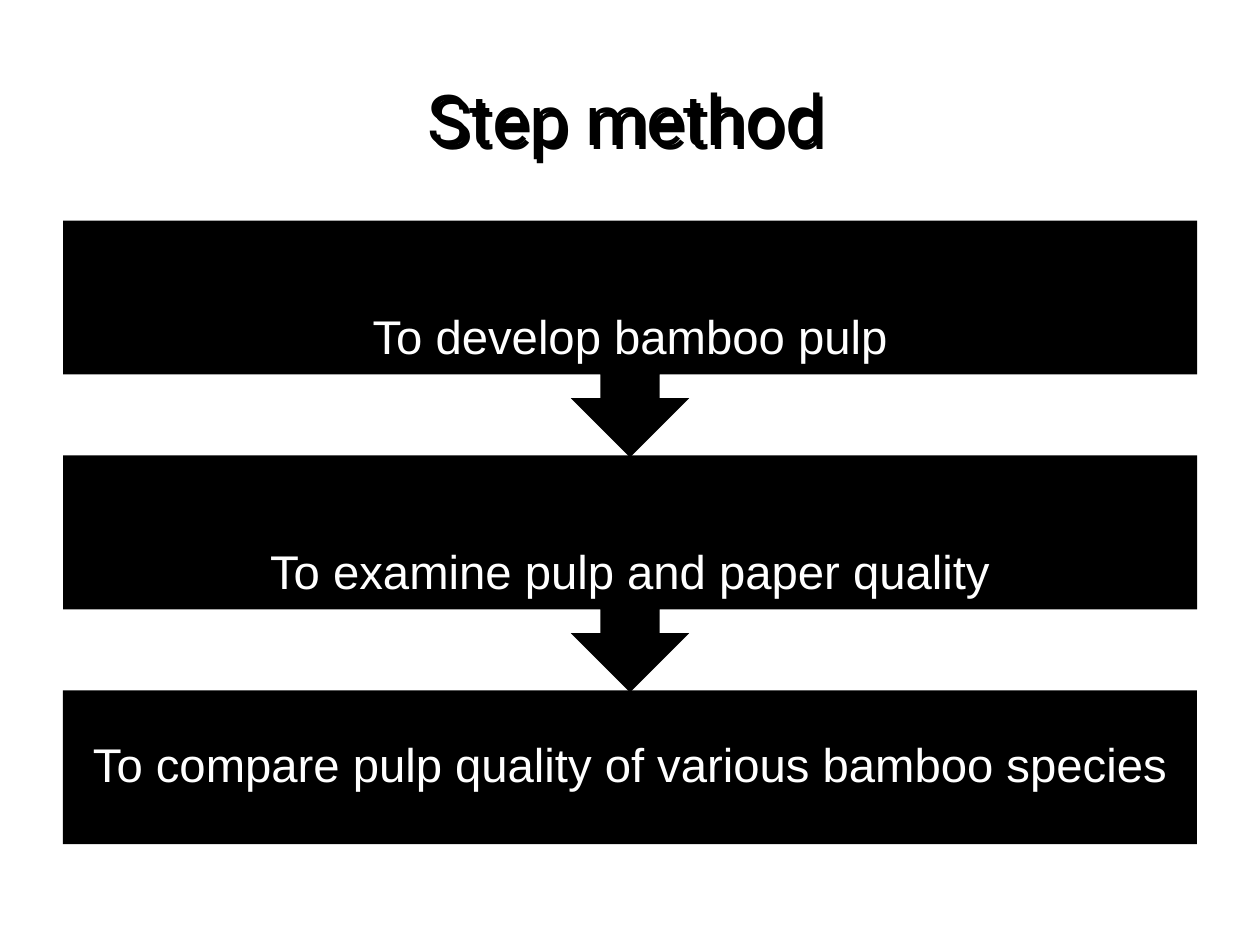
from lxml.etree import SubElement
from pptx import Presentation
from pptx.dml.color import RGBColor
from pptx.enum.shapes import MSO_SHAPE as SHAPE
from pptx.enum.text import MSO_ANCHOR as ANCHOR, PP_ALIGN as ALIGN
from pptx.oxml.ns import qn
from pptx.util import Inches, Pt

COLORS = {"ink": "000000", "label": "FFFFFF"}
STEPS = [
    "To develop bamboo pulp",
    "To examine pulp and paper quality",
    "To compare pulp quality of various bamboo species",
]
LEFT, TOP, WIDTH, PITCH = 0.5, 1.75, 9, 1.865
CALLOUT_H, BOX_H = 1.88, 1.22


def rgb(name):
    """Return the named colour."""
    return RGBColor.from_string(COLORS[name])


def write(tf, text, size, font, color):
    """Put one centred run in a text frame."""
    tf.word_wrap = True
    tf.vertical_anchor = ANCHOR.MIDDLE
    p = tf.paragraphs[0]
    p.alignment = ALIGN.CENTER
    r = p.add_run()
    r.text = text
    r.font.size = Pt(size)
    r.font.name = font
    r.font.color.rgb = rgb(color)
    return p


def add_title(s, text):
    """Place the title and give it a hard shadow."""
    sp = s.shapes.title
    sp.left, sp.top, sp.width, sp.height = map(Inches, (0.47, 0.31, 9, 1.25))
    write(sp.text_frame, text, 40, "Roboto", "ink")
    sp.shadow.inherit = False
    effects = sp.element.spPr.find(qn("a:effectLst"))
    shadow = SubElement(effects, qn("a:outerShdw"), dist="38100", dir="2700000")
    SubElement(shadow, qn("a:srgbClr"), val=COLORS["ink"])


def add_block(s, kind, box):
    """Draw a solid block without outline."""
    sp = s.shapes.add_shape(kind, *box)
    sp.shadow.inherit = False
    sp.fill.solid()
    sp.fill.fore_color.rgb = rgb("ink")
    sp.line.fill.background()
    return sp


def add_label(s, text, box):
    """Write a step's wording over its block."""
    tf = s.shapes.add_textbox(*box).text_frame
    tf.margin_left = tf.margin_right = Inches(0.21)
    tf.margin_top = tf.margin_bottom = Inches(0.21)
    p = write(tf, text, 27, "Arial", "label")
    p.line_spacing = 0.9


def add_step(s, row, text):
    """Add one step, with an arrow to the next unless it is the last."""
    last = row == len(STEPS) - 1
    height = BOX_H if last else CALLOUT_H
    box = [Inches(v) for v in (LEFT, TOP + row * PITCH, WIDTH, height)]
    sp = add_block(s, SHAPE.RECTANGLE if last else SHAPE.UP_ARROW_CALLOUT, box)
    if not last:
        sp.rotation = 180
        for i, share in enumerate((0.25, 0.25, 0.25, 0.65)):
            sp.adjustments[i] = share
    add_label(s, text, box)


def main():
    """Build the slide and save it."""
    prs = Presentation()
    prs.slide_width, prs.slide_height = Inches(10), Inches(7.5)
    s = prs.slides.add_slide(prs.slide_layouts[5])
    add_title(s, "Step method")
    for row, text in reversed(list(enumerate(STEPS))):
        add_step(s, row, text)
    prs.save("out.pptx")


if __name__ == "__main__":
    main()
